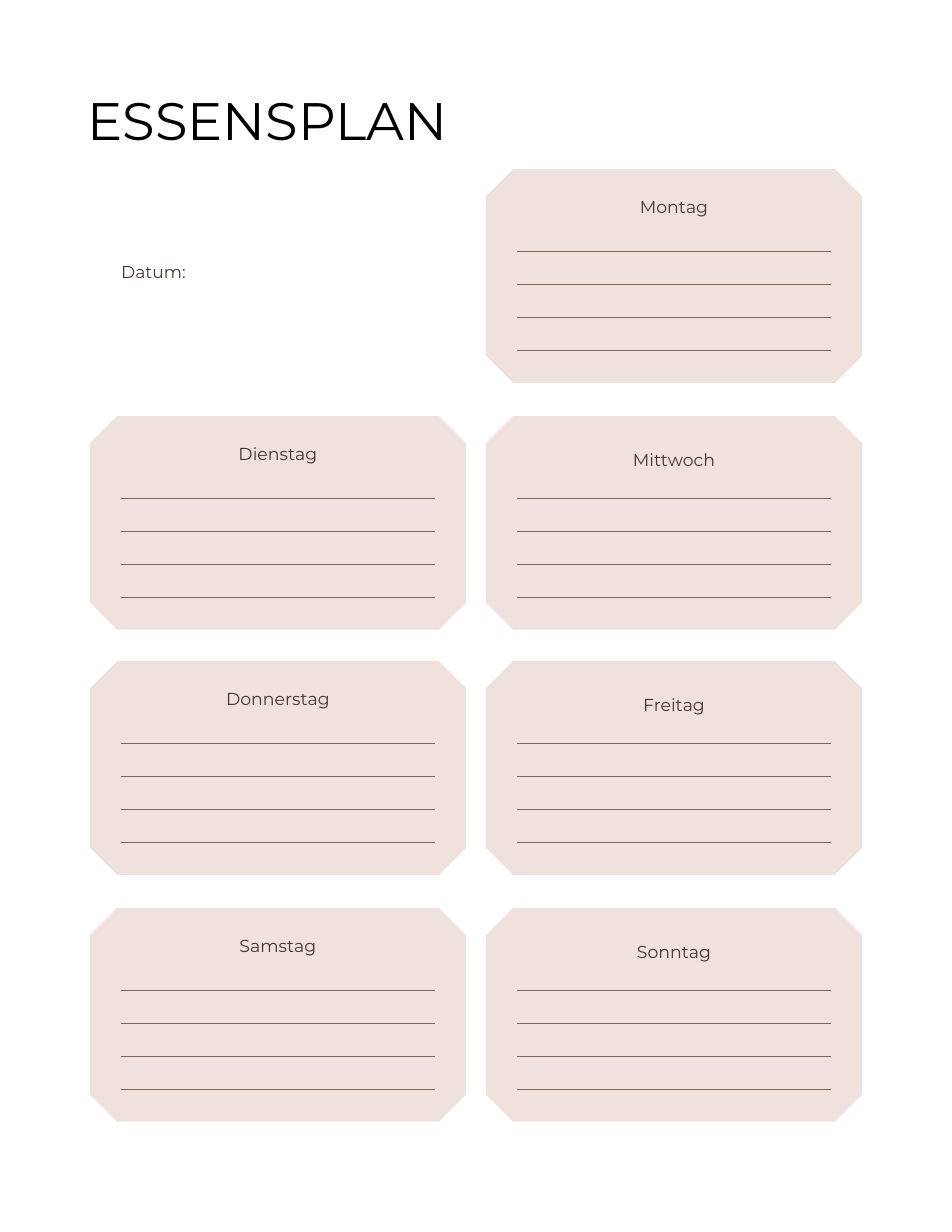
from dataclasses import dataclass

import pptx
import pptx.dml.color
import pptx.enum.shapes
import pptx.enum.text
import pptx.oxml.ns
import pptx.util
from lxml import etree

Pt = pptx.util.Pt
RGB = pptx.dml.color.RGBColor.from_string
Align = pptx.enum.text.PP_ALIGN


@dataclass(frozen=True)
class Theme:
    """Colours, type sizes and line weight of the planner."""
    font: str = "Montserrat"
    card: str = "EFE1DD"
    rule: str = "7B6656"
    label: str = "43392F"
    title: str = "000000"
    title_size: float = 33.9
    day_size: float = 11.1
    date_size: float = 11
    rule_width: float = 0.75


THEME = Theme()
PAGE_WIDTH, PAGE_HEIGHT = 612, 792
CARD_WIDTH, CARD_HEIGHT, CORNER = 242, 137.3, 17.5
LEFT, RIGHT = 57.7, 312.3
ROW_TOPS = (108.8, 267.5, 425.1, 583.8)
HIGH_LABEL, LOW_LABEL = 15, 19
LABEL_WIDTH, LABEL_HEIGHT = 81.4, 15.5
RULE_INSET, FIRST_RULE, RULE_GAP, RULE_COUNT = 20.2, 53.1, 21.1, 4
DAYS = (
    ("Montag", RIGHT, 0, HIGH_LABEL),
    ("Dienstag", LEFT, 1, HIGH_LABEL),
    ("Mittwoch", RIGHT, 1, LOW_LABEL),
    ("Donnerstag", LEFT, 2, HIGH_LABEL),
    ("Freitag", RIGHT, 2, LOW_LABEL),
    ("Samstag", LEFT, 3, HIGH_LABEL),
    ("Sonntag", RIGHT, 3, LOW_LABEL),
)


def write_text(shape, words, size, color, spacing, align):
    """Fill a shape with one formatted run and no margins."""
    frame = shape.text_frame
    frame.word_wrap = True
    frame.auto_size = pptx.enum.text.MSO_AUTO_SIZE.NONE
    frame.vertical_anchor = pptx.enum.text.MSO_ANCHOR.TOP
    frame.margin_left = frame.margin_right = Pt(0)
    frame.margin_top = frame.margin_bottom = Pt(0)
    paragraph = frame.paragraphs[0]
    paragraph.alignment = align
    paragraph.line_spacing = Pt(spacing)
    run = paragraph.add_run()
    run.text = words
    run.font.name = THEME.font
    run.font.size = Pt(size)
    run.font.color.rgb = RGB(color)


def add_heading(slide, left, top, width, height):
    """Place the planner title in its box."""
    heading = slide.shapes.title
    heading.left, heading.top = Pt(left), Pt(top)
    heading.width, heading.height = Pt(width), Pt(height)
    write_text(heading, "ESSENSPLAN", THEME.title_size, THEME.title, height, Align.CENTER)


def add_date(slide, left, top, width, height):
    """Place the date label in its box."""
    date = slide.shapes.add_textbox(Pt(left), Pt(top), Pt(width), Pt(height))
    write_text(date, "Datum:", THEME.date_size, THEME.label, height, Align.LEFT)


def add_rule(slide, left, right, y):
    """Draw one horizontal writing line."""
    rule = slide.shapes.add_connector(
        pptx.enum.shapes.MSO_CONNECTOR.STRAIGHT, Pt(left), Pt(y), Pt(right), Pt(y))
    rule.line.color.rgb = RGB(THEME.rule)
    rule.line.width = Pt(THEME.rule_width)
    etree.SubElement(rule.element.spPr, pptx.oxml.ns.qn("a:effectLst"))


def add_day_card(slide, day, left, top, width, height, label_offset):
    """Place a day card with its label and writing lines."""
    card = slide.shapes.add_shape(
        pptx.enum.shapes.MSO_SHAPE.OCTAGON, Pt(left), Pt(top), Pt(width), Pt(height))
    card.adjustments[0] = CORNER / min(width, height)
    card.shadow.inherit = False
    card.fill.solid()
    card.fill.fore_color.rgb = RGB(THEME.card)
    card.line.fill.background()
    for index in range(RULE_COUNT):
        add_rule(slide, left + RULE_INSET, left + width - RULE_INSET,
                 top + FIRST_RULE + index * RULE_GAP)
    label = slide.shapes.add_textbox(
        Pt(left + (width - LABEL_WIDTH) / 2), Pt(top + label_offset),
        Pt(LABEL_WIDTH), Pt(LABEL_HEIGHT))
    write_text(label, day, THEME.day_size, THEME.label, LABEL_HEIGHT, Align.CENTER)


def main():
    """Build and save the weekly meal planner."""
    deck = pptx.Presentation()
    deck.slide_width, deck.slide_height = Pt(PAGE_WIDTH), Pt(PAGE_HEIGHT)
    slide = deck.slides.add_slide(deck.slide_layouts.get_by_name("Title Only"))
    add_heading(slide, 44.6, 56.2, 254.9, 41)
    add_date(slide, 77.9, 165.6, 72.7, 15.4)
    for day, left, row, label_offset in DAYS:
        add_day_card(slide, day, left, ROW_TOPS[row], CARD_WIDTH, CARD_HEIGHT, label_offset)
    deck.save("out.pptx")


if __name__ == "__main__":
    main()
